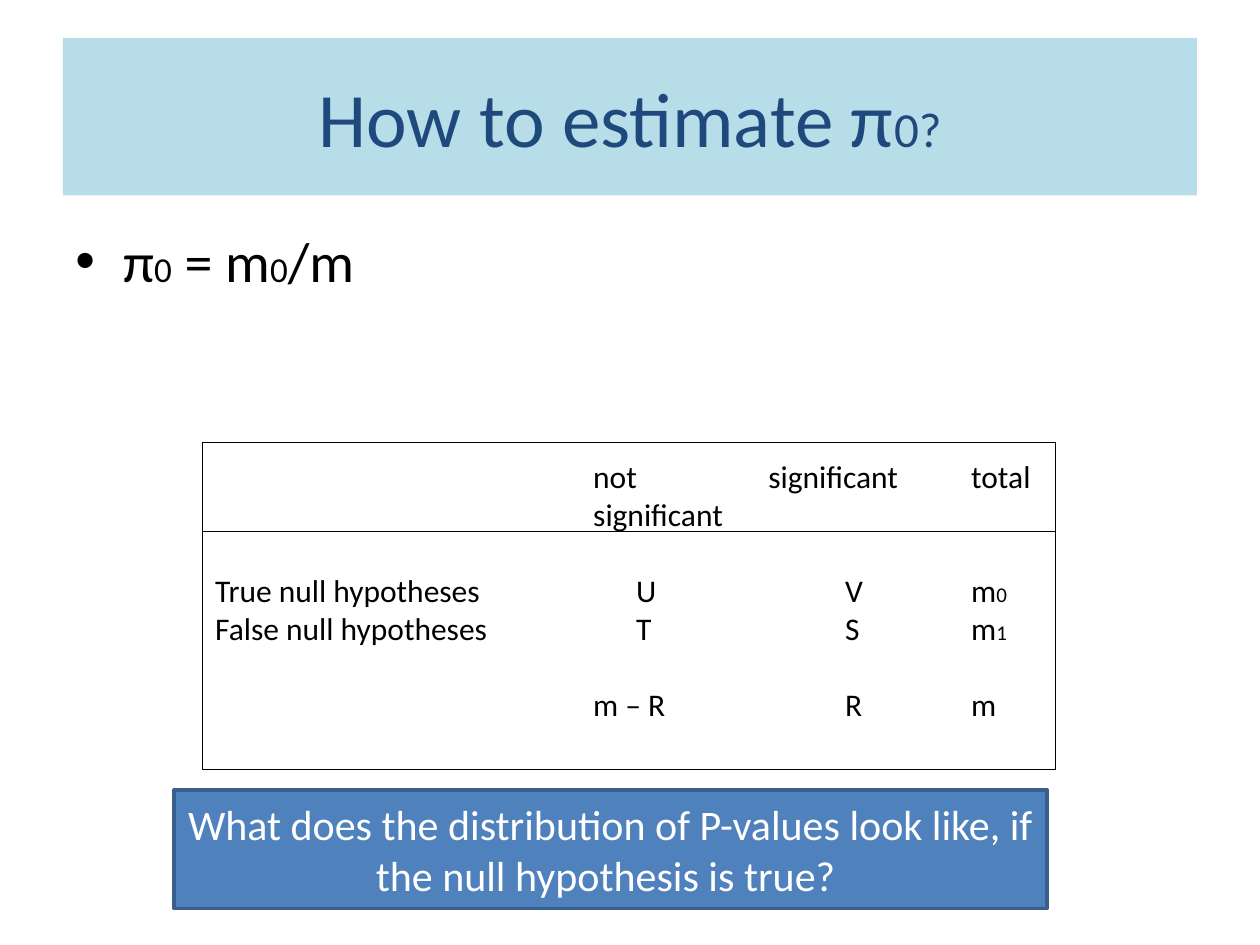
from lxml.etree import SubElement
from pptx import Presentation
from pptx.dml.color import RGBColor
from pptx.enum.shapes import MSO_CONNECTOR, MSO_SHAPE
from pptx.enum.text import MSO_ANCHOR as ANCHOR, PP_ALIGN as ALIGN
from pptx.oxml.ns import qn
from pptx.util import Inches, Pt

WIDTH, HEIGHT = 10, 7.5
MARGIN = WIDTH * 0.05
CONTENT = WIDTH * 0.9
LINE = 21.96  # height of one 18 pt text line, in points


def color(value):
    return RGBColor.from_string(value)


def write(paragraph, *pieces, size=18, small=12, ink="000000",
          align=ALIGN.LEFT, before=0):
    """Pieces alternate between full size and small."""
    paragraph.alignment = align
    paragraph.space_before = Pt(before)
    for i, piece in enumerate(pieces):
        run = paragraph.add_run()
        run.text = piece
        run.font.name = "Calibri"
        run.font.size = Pt(small if i % 2 else size)
        run.font.color.rgb = color(ink)


def set_tabs(paragraph, stops):
    tabs = SubElement(paragraph._p.get_or_add_pPr(), qn("a:tabLst"))
    for stop in stops:
        SubElement(tabs, qn("a:tab"), pos=str(Inches(stop)), algn="l")


def set_bullet(paragraph, indent):
    props = paragraph._p.get_or_add_pPr()
    props.set("marL", str(Inches(indent)))
    props.set("indent", str(-Inches(indent)))
    SubElement(props, qn("a:buFont"), typeface="Arial")
    SubElement(props, qn("a:buChar"), char="•")


def panel(slide, box, fill, line=None, weight=0.75, anchor=ANCHOR.MIDDLE):
    shape = slide.shapes.add_shape(MSO_SHAPE.RECTANGLE, *map(Inches, box))
    shape.shadow.inherit = False
    shape.fill.solid()
    shape.fill.fore_color.rgb = color(fill)
    if line:
        shape.line.color.rgb = color(line)
        shape.line.width = Pt(weight)
    else:
        shape.line.fill.background()
    frame = shape.text_frame
    frame.word_wrap = True
    frame.vertical_anchor = anchor
    return frame


def title(slide, box):
    frame = panel(slide, box, "B7DEE8")
    write(frame.paragraphs[0], "How to estimate π", "0?",
          size=44, small=28, ink="1F497D", align=ALIGN.CENTER)


def definition(slide, box):
    frame = slide.shapes.add_textbox(*map(Inches, box)).text_frame
    frame.word_wrap = True
    formula = frame.paragraphs[0]
    write(formula, "π", "0", " = m", "0", "/m", size=32, small=20, before=6.4)
    set_bullet(formula, 0.38)


def outcomes(slide, box):
    left, top, width, height = box
    frame = panel(slide, box, "FFFFFF", "000000", anchor=ANCHOR.TOP)
    frame.margin_top = Inches(0.12)

    # Tab stops for the three columns
    heads, counts, sums = (3, 4.39, 6), (3.34, 5, 6), (3, 5, 6)
    rows = [
        (heads, 0, ["\tnot\tsignificant\ttotal"]),
        (heads, 0, ["\tsignificant"]),
        (counts, LINE, ["True null hypotheses\tU\tV\tm", "0"]),
        (counts, 0, ["False null hypotheses\tT\tS\tm", "1"]),
        (sums, LINE, ["\tm – R\tR\tm"]),
    ]
    for i, (stops, before, pieces) in enumerate(rows):
        row = frame.add_paragraph() if i else frame.paragraphs[0]
        write(row, *pieces, before=before)
        set_tabs(row, stops)

    # Rule below the column heads
    y = top + height * 0.273
    rule = slide.shapes.add_connector(
        MSO_CONNECTOR.STRAIGHT, *map(Inches, (left, y, left + width, y)))
    rule.line.color.rgb = color("000000")
    rule.line.width = Pt(0.75)
    SubElement(rule._element.spPr, qn("a:effectLst"))


def question(slide, box):
    frame = panel(slide, box, "4F81BD", "3A5F8C", weight=2)
    write(frame.paragraphs[0],
          "What does the distribution of P-values look like, "
          "if the null hypothesis is true? ",
          size=24, ink="FFFFFF", align=ALIGN.CENTER)


def main():
    deck = Presentation()
    deck.slide_width, deck.slide_height = Inches(WIDTH), Inches(HEIGHT)
    slide = deck.slides.add_slide(deck.slide_layouts[6])
    title(slide, (MARGIN, HEIGHT * 0.04, CONTENT, HEIGHT / 6))
    definition(slide, (MARGIN, 1.75, CONTENT, HEIGHT * 0.66))
    outcomes(slide, (1.61, 3.51, 6.77, 2.6))
    question(slide, (1.38, 6.27, 6.93, 0.94))
    deck.save("out.pptx")


if __name__ == "__main__":
    main()
